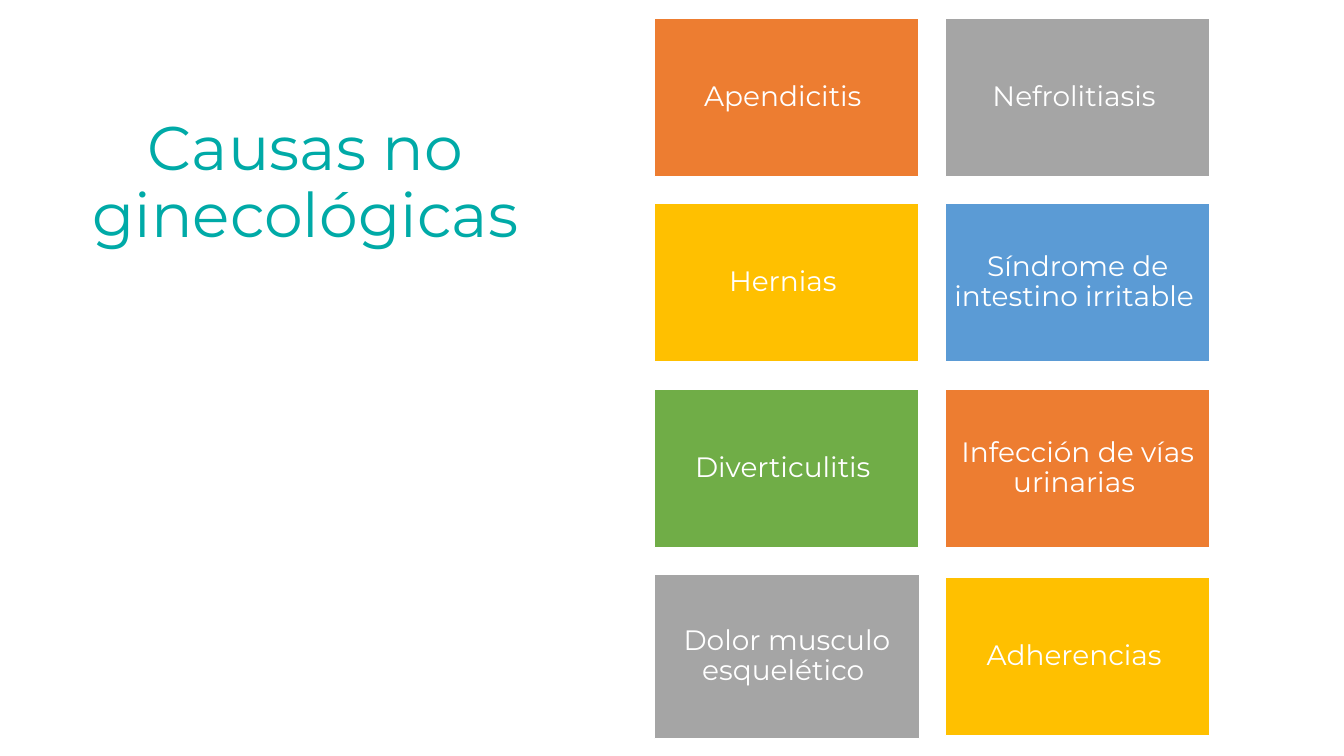
from pptx import Presentation
from pptx.dml.color import RGBColor
from pptx.enum.shapes import MSO_SHAPE as Shape
from pptx.enum.text import MSO_ANCHOR as Anchor, MSO_AUTO_SIZE as AutoSize, PP_ALIGN as Align
from pptx.util import Inches, Pt

FONT = "Montserrat"
WHITE, TEAL = "FFFFFF", "00AAA7"
ORANGE, GRAY, YELLOW, BLUE, GREEN = "ED7D31", "A5A5A5", "FFC000", "5B9BD5", "70AD47"

TILE = (2.62, 1.57)
LARGE_TILE = (2.63, 1.63)
CAUSE_ROWS = [
    [("Apendicitis ", ORANGE, TILE), ("Nefrolitiasis ", GRAY, TILE)],
    [("Hernias ", YELLOW, TILE), ("Síndrome de intestino irritable ", BLUE, TILE)],
    [("Diverticulitis ", GREEN, TILE), ("Infección de vías urinarias ", ORANGE, TILE)],
    [("Dolor musculo esquelético ", GRAY, LARGE_TILE), ("Adherencias ", YELLOW, TILE)],
]


def color(value):
    return RGBColor.from_string(value)


def apply_format(target, values):
    for name, value in values.items():
        setattr(target, name, value)


def write_text(shape, text, size, text_color, margin_x, margin_y):
    frame = shape.text_frame
    apply_format(frame, {
        "word_wrap": True,
        "auto_size": AutoSize.NONE,
        "vertical_anchor": Anchor.MIDDLE,
        "margin_left": Inches(margin_x),
        "margin_right": Inches(margin_x),
        "margin_top": Inches(margin_y),
        "margin_bottom": Inches(margin_y),
    })
    frame.text = text
    paragraph = frame.paragraphs[0]
    apply_format(paragraph, {
        "alignment": Align.CENTER,
        "line_spacing": 0.9,
        "space_before": Pt(0),
    })
    font = paragraph.runs[0].font
    apply_format(font, {"name": FONT, "size": Pt(size)})
    font.color.rgb = color(text_color)


def place_title(slide, text, left, top, width, height):
    title = slide.shapes.title
    apply_format(title, {
        "left": Inches(left),
        "top": Inches(top),
        "width": Inches(width),
        "height": Inches(height),
    })
    write_text(title, text, 44, TEAL, 0.1, 0.05)


def add_tile(slide, text, fill, left, top, width, height):
    tile = slide.shapes.add_shape(
        Shape.RECTANGLE, Inches(left), Inches(top), Inches(width), Inches(height))
    tile.shadow.inherit = False
    tile.fill.solid()
    tile.fill.fore_color.rgb = color(fill)
    tile.line.color.rgb = color(WHITE)
    tile.line.width = Pt(1)
    write_text(tile, text, 20, WHITE, 0.08, 0.08)


def add_cause_grid(slide, rows, left, top, column_step, row_gap):
    for row in rows:
        row_height = max(height for _, _, (_, height) in row)
        for column, (text, fill, (width, height)) in enumerate(row):
            add_tile(slide, text, fill, left + column * column_step,
                     top + (row_height - height) / 2, width, height)
        top += row_height + row_gap


def main():
    presentation = Presentation()
    apply_format(presentation, {
        "slide_width": Inches(13.33),
        "slide_height": Inches(7.5),
    })
    slide = presentation.slides.add_slide(presentation.slide_layouts.get_by_name("Title Only"))
    add_cause_grid(slide, CAUSE_ROWS, left=6.49, top=0.18, column_step=2.89, row_gap=0.27)
    place_title(slide, "Causas no ginecológicas", 0.6, 1.1, 4.86, 1.45)
    presentation.save("out.pptx")


if __name__ == "__main__":
    main()
